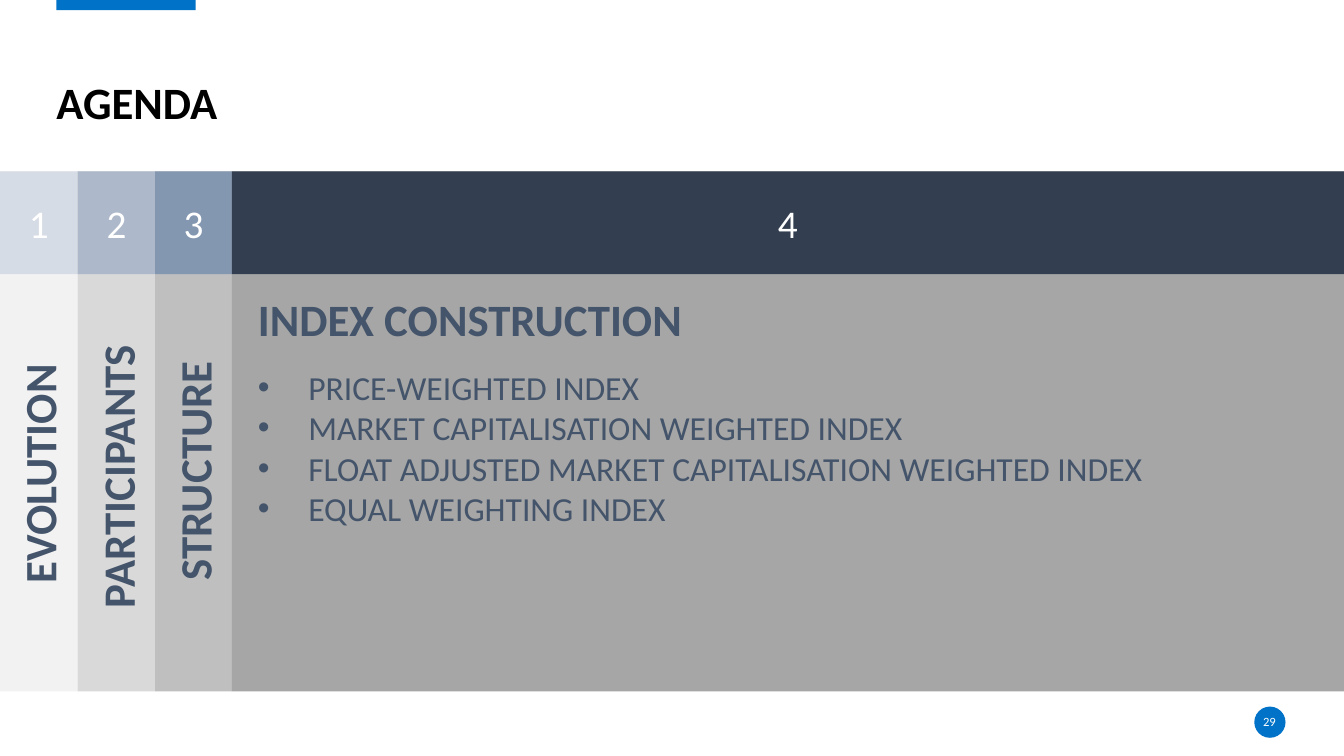
from lxml import etree
from pptx import Presentation
from pptx.dml.color import RGBColor
from pptx.enum import shapes, text
from pptx.oxml.ns import qn
from pptx.util import Inches, Pt

BLUE, SLATE, WHITE = "0072C7", "44546A", "FFFFFF"
LEFT, CENTER = text.PP_ALIGN.LEFT, text.PP_ALIGN.CENTER


def add_block(kind, x, y, w, h, color):
    sp = s.shapes.add_shape(kind, Inches(x), Inches(y), Inches(w), Inches(h))
    sp.shadow.inherit = False
    sp.fill.solid()
    sp.fill.fore_color.rgb = RGBColor.from_string(color)
    sp.line.fill.background()
    return sp


def add_run(p, words, size, color, bold=False, align=LEFT):
    p.alignment = align
    r = p.add_run()
    r.text = words
    r.font.name = "Calibri"
    r.font.size = Pt(size)
    r.font.bold = bold
    r.font.color.rgb = RGBColor.from_string(color)


prs = Presentation()
prs.slide_width, prs.slide_height = Inches(13.33), Inches(7.5)
s = prs.slides.add_slide(prs.slide_layouts[5])
RECT, OVAL = shapes.MSO_SHAPE.RECTANGLE, shapes.MSO_SHAPE.OVAL

# Accent tab and page number badge
add_block(RECT, 0.56, -0.02, 1.38, 0.12, BLUE)
add_block(OVAL, 12.44, 7.01, 0.31, 0.31, BLUE)
number = s.shapes.add_textbox(Inches(12.43), Inches(7.06), Inches(0.32), Inches(0.2))

# Title
title = s.shapes.title
title.left, title.top = Inches(0.56), Inches(0.27)
title.width, title.height = Inches(12.19), Inches(1.01)
for sp, anchor in ((title, text.MSO_ANCHOR.BOTTOM), (number, text.MSO_ANCHOR.MIDDLE)):
    tf = sp.text_frame
    tf.margin_left = tf.margin_right = tf.margin_top = tf.margin_bottom = 0
    tf.word_wrap = True
    tf.auto_size = text.MSO_AUTO_SIZE.NONE
    tf.vertical_anchor = anchor
p = title.text_frame.paragraphs[0]
p.line_spacing = 0.9
add_run(p, "AGENDA", 32, "000000", True)
add_run(number.text_frame.paragraphs[0], "29", 9, WHITE, align=CENTER)

# Agenda columns: left, width, body colour, header colour
columns = [
    (0, 0.77, "F2F2F2", "D6DCE5"),
    (0.77, 0.77, "D9D9D9", "ADB9CA"),
    (1.54, 0.76, "BFBFBF", "8497B0"),
    (2.3, 11.03, "A6A6A6", "333F50"),
]
for i, (x, w, body, head) in enumerate(columns, 1):
    add_block(RECT, x, 1.7, w, 5.16, body)
    sp = add_block(RECT, x, 1.7, w, 1.02, head)
    sp.text_frame.vertical_anchor = text.MSO_ANCHOR.MIDDLE
    add_run(sp.text_frame.paragraphs[0], str(i), 28, WHITE, align=CENTER)

# Section names, turned upright in the narrow columns
headings = [
    ("EVOLUTION", -0.86, 4.32, 2.49, 270),
    ("PARTICIPANTS", -0.33, 4.32, 2.99, 270),
    ("STRUCTURE", 0.57, 4.18, 2.71, 270),
    ("INDEX CONSTRUCTION", 2.46, 2.84, 6.93, 0),
]
for words, x, y, w, turn in headings:
    sp = s.shapes.add_textbox(Inches(x), Inches(y), Inches(w), Inches(0.64))
    sp.rotation = turn
    sp.text_frame.word_wrap = True
    sp.text_frame.auto_size = text.MSO_AUTO_SIZE.SHAPE_TO_FIT_TEXT
    add_run(sp.text_frame.paragraphs[0], words, 32, SLATE, True)

# Topics of the current section
topics = [
    "PRICE-WEIGHTED INDEX",
    "MARKET CAPITALISATION WEIGHTED INDEX",
    "FLOAT ADJUSTED MARKET CAPITALISATION WEIGHTED INDEX",
    "EQUAL WEIGHTING INDEX",
]
sp = s.shapes.add_textbox(Inches(2.46), Inches(3.59), Inches(10.3), Inches(1.72))
tf = sp.text_frame
tf.word_wrap = True
tf.auto_size = text.MSO_AUTO_SIZE.SHAPE_TO_FIT_TEXT
for i, topic in enumerate(topics):
    p = tf.add_paragraph() if i else tf.paragraphs[0]
    add_run(p, topic, 24, SLATE)
    pPr = p._p.get_or_add_pPr()
    pPr.set("marL", str(Inches(0.5)))
    pPr.set("indent", str(-Inches(0.5)))
    etree.SubElement(pPr, qn("a:buFont")).set("typeface", "Arial")
    etree.SubElement(pPr, qn("a:buChar")).set("char", "•")

prs.save("out.pptx")
